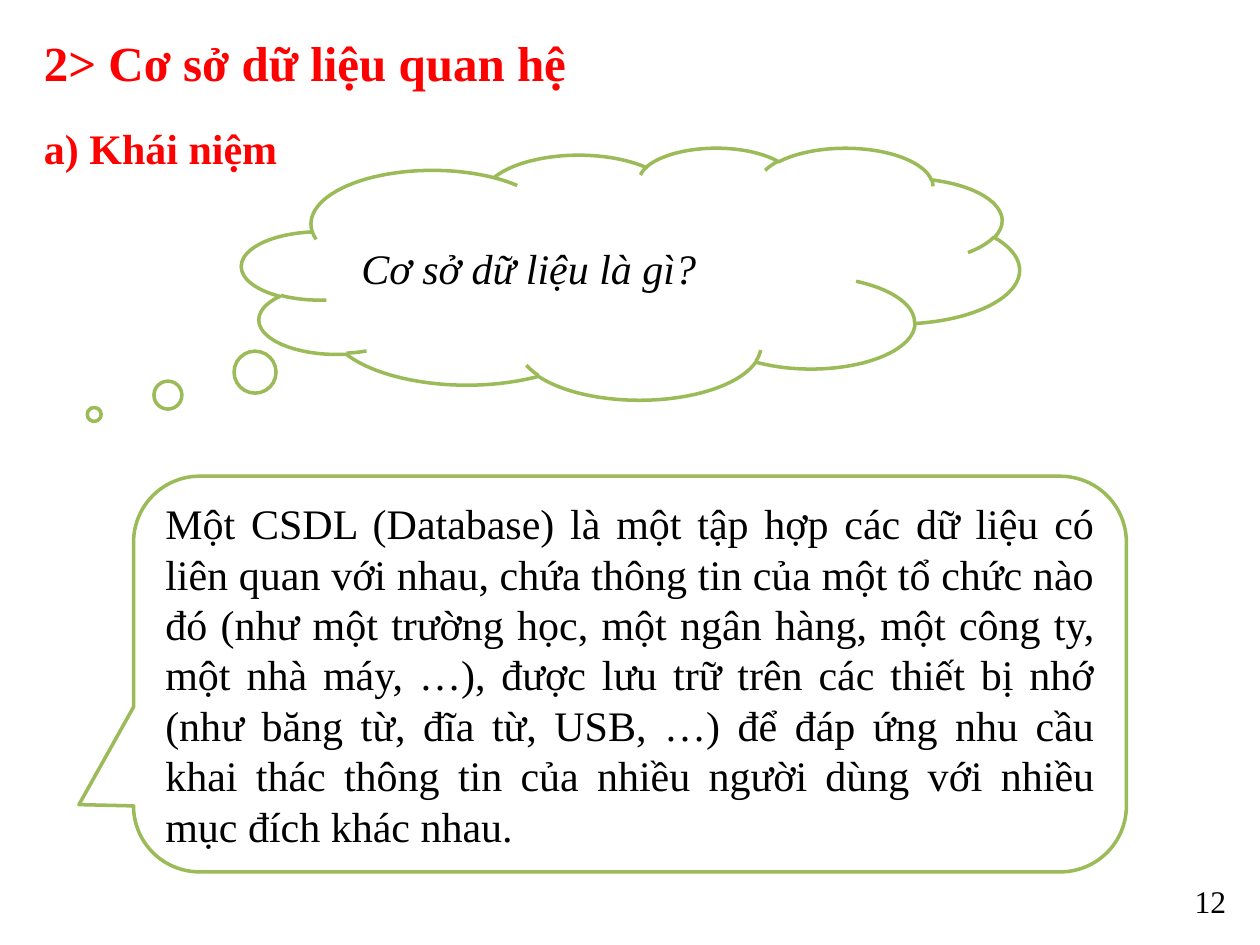
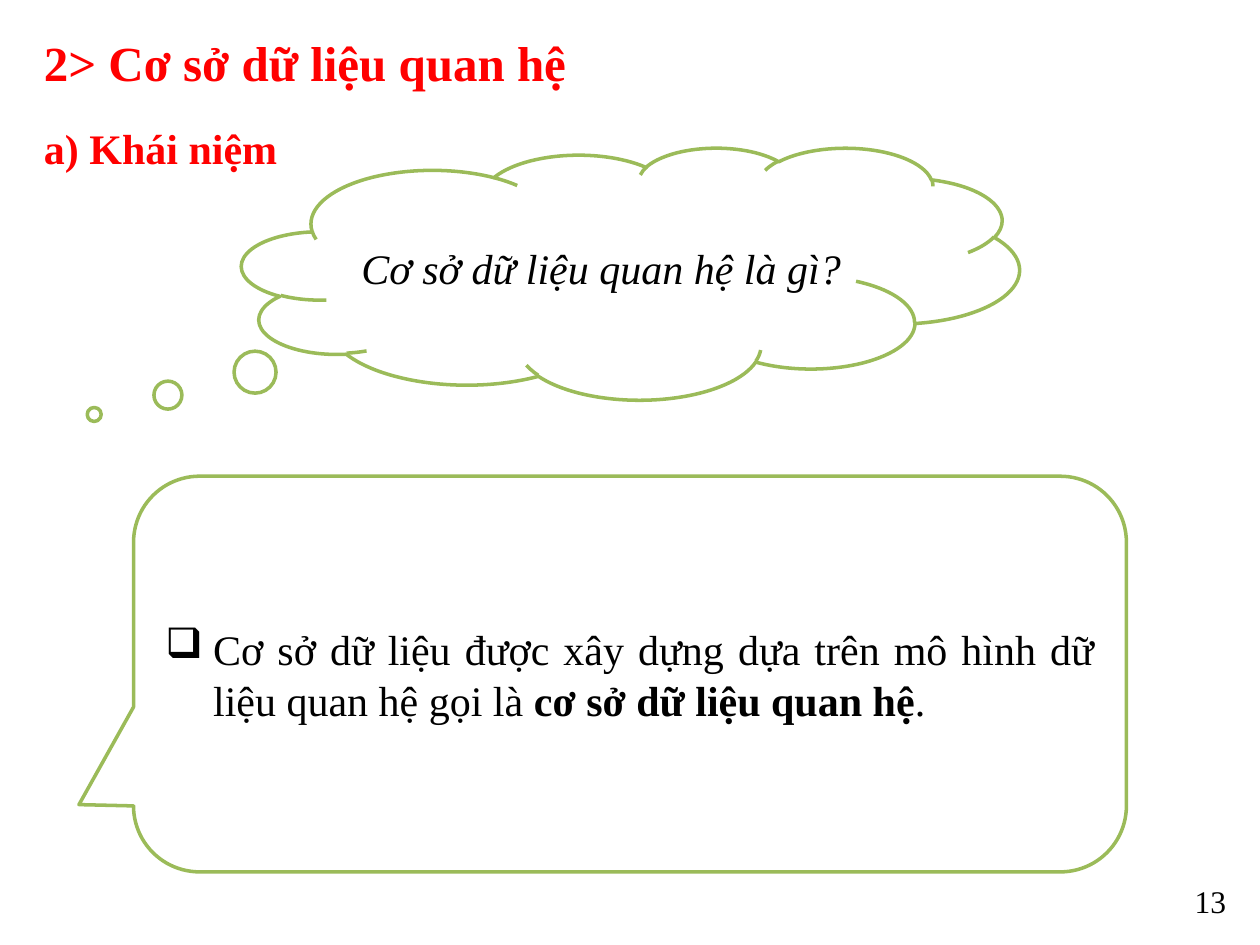
"""Build two slides that define a database and a relational database."""
import dataclasses
import typing

import lxml.etree
import pptx
import pptx.dml.color
import pptx.enum.shapes
import pptx.enum.text
import pptx.oxml.ns
import pptx.util

PX = 9144
FONT = "Times New Roman"
INK = {"text": "000000", "title": "FF0000", "line": "9BBB59", "fill": "FFFFFF"}
ALIGN = pptx.enum.text.PP_ALIGN
ANCHOR = pptx.enum.text.MSO_ANCHOR
SHAPE = pptx.enum.shapes.MSO_SHAPE


@dataclasses.dataclass(frozen=True)
class Box:
    """Place and text style of one element, in px and points."""
    left: int
    top: int
    width: int
    height: int
    size: int = 24
    ink: str = "text"
    bold: bool = False
    italic: bool = False
    align: typing.Any = ALIGN.JUSTIFY
    anchor: typing.Any = ANCHOR.MIDDLE
    kind: typing.Any = None
    tail: tuple[float, ...] = ()


@dataclasses.dataclass(frozen=True)
class Page:
    """Wording of one slide; the answer pairs text with a bold flag."""
    number: str
    question: str
    answer: tuple[tuple[str, bool], ...]
    bullet: str = ""


TITLE = Box(25, 12, 867, 75, size=28, ink="title", bold=True)
TOPIC = Box(25, 92, 358, 50, ink="title", bold=True,
            align=ALIGN.LEFT, anchor=ANCHOR.TOP)
NUMBER = Box(750, 695, 233, 40, size=18, align=ALIGN.RIGHT, anchor=ANCHOR.TOP)
CLOUD = Box(192, 117, 617, 200, italic=True,
            kind=SHAPE.CLOUD_CALLOUT, tail=(-0.69, 0.56))
SPEECH = Box(106, 378, 788, 314,
             kind=SHAPE.ROUNDED_RECTANGULAR_CALLOUT, tail=(-0.555, 0.33, 0.167))

PAGES = (
    Page("12", "Cơ sở dữ liệu là gì?", ((
        "Một CSDL (Database) là một tập hợp các dữ liệu có liên quan với nhau, "
        "chứa thông tin của một tổ chức nào đó (như một trường học, một ngân "
        "hàng, một công ty, một nhà máy, …), được lưu trữ trên các thiết bị nhớ "
        "(như băng từ, đĩa từ, USB, …) để đáp ứng nhu cầu khai thác thông tin "
        "của nhiều người dùng với nhiều mục đích khác nhau.", False),)),
    Page("13", "Cơ sở dữ liệu quan hệ là gì?", (
        ("Cơ sở dữ liệu được xây dựng dựa trên mô hình dữ liệu quan hệ gọi là ",
         False),
        ("cơ sở dữ liệu quan hệ", True),
        (".", False)), bullet="❑"),
)


def color(name: str) -> pptx.dml.color.RGBColor:
    """Return the named colour."""
    return pptx.dml.color.RGBColor.from_string(INK[name])


def mark(par: typing.Any, sign: str) -> None:
    """Give a paragraph a bullet with a hanging indent."""
    props = par._p.get_or_add_pPr()
    props.set("marL", str(38 * PX))
    props.set("indent", str(-38 * PX))
    node = lxml.etree.SubElement(props, pptx.oxml.ns.qn("a:buChar"))
    node.set("char", sign)


def write(shape: typing.Any, box: Box, runs: typing.Iterable[tuple[str, bool]],
          bullet: str) -> None:
    """Fill a shape with one styled paragraph."""
    frame = shape.text_frame
    frame.word_wrap = True
    frame.vertical_anchor = box.anchor
    par = frame.paragraphs[0]
    par.alignment = box.align
    if bullet:
        mark(par, bullet)
    font = par.font
    font.name = FONT
    font.size = pptx.util.Pt(box.size)
    font.bold = box.bold
    font.italic = box.italic
    font.color.rgb = color(box.ink)
    for text, strong in runs:
        run = par.add_run()
        run.text = text
        if strong:
            run.font.bold = True


def draw(slide: typing.Any, box: Box, runs: typing.Iterable[tuple[str, bool]],
         bullet: str = "") -> None:
    """Draw a text box or a callout with its text."""
    area = [side * PX for side in (box.left, box.top, box.width, box.height)]
    if box.kind is None:
        shape = slide.shapes.add_textbox(*area)
    else:
        shape = slide.shapes.add_shape(box.kind, *area)
        shape.shadow.inherit = False
        shape.fill.solid()
        shape.fill.fore_color.rgb = color("fill")
        shape.line.color.rgb = color("line")
        shape.line.width = pptx.util.Pt(2)
        for index, value in enumerate(box.tail):
            shape.adjustments[index] = value
    write(shape, box, runs, bullet)


def build(deck: typing.Any, page: Page) -> None:
    """Add one slide to the deck."""
    slide = deck.slides.add_slide(deck.slide_layouts[6])
    draw(slide, TITLE, [("2> Cơ sở dữ liệu quan hệ", False)])
    draw(slide, NUMBER, [(page.number, False)])
    draw(slide, CLOUD, [(page.question, False)])
    draw(slide, SPEECH, page.answer, page.bullet)
    draw(slide, TOPIC, [("a) Khái niệm", False)])


def main() -> None:
    """Build and save the deck."""
    deck = pptx.Presentation()
    deck.slide_width = 1000 * PX
    deck.slide_height = 750 * PX
    for page in PAGES:
        build(deck, page)
    deck.save("out.pptx")


if __name__ == "__main__":
    main()
